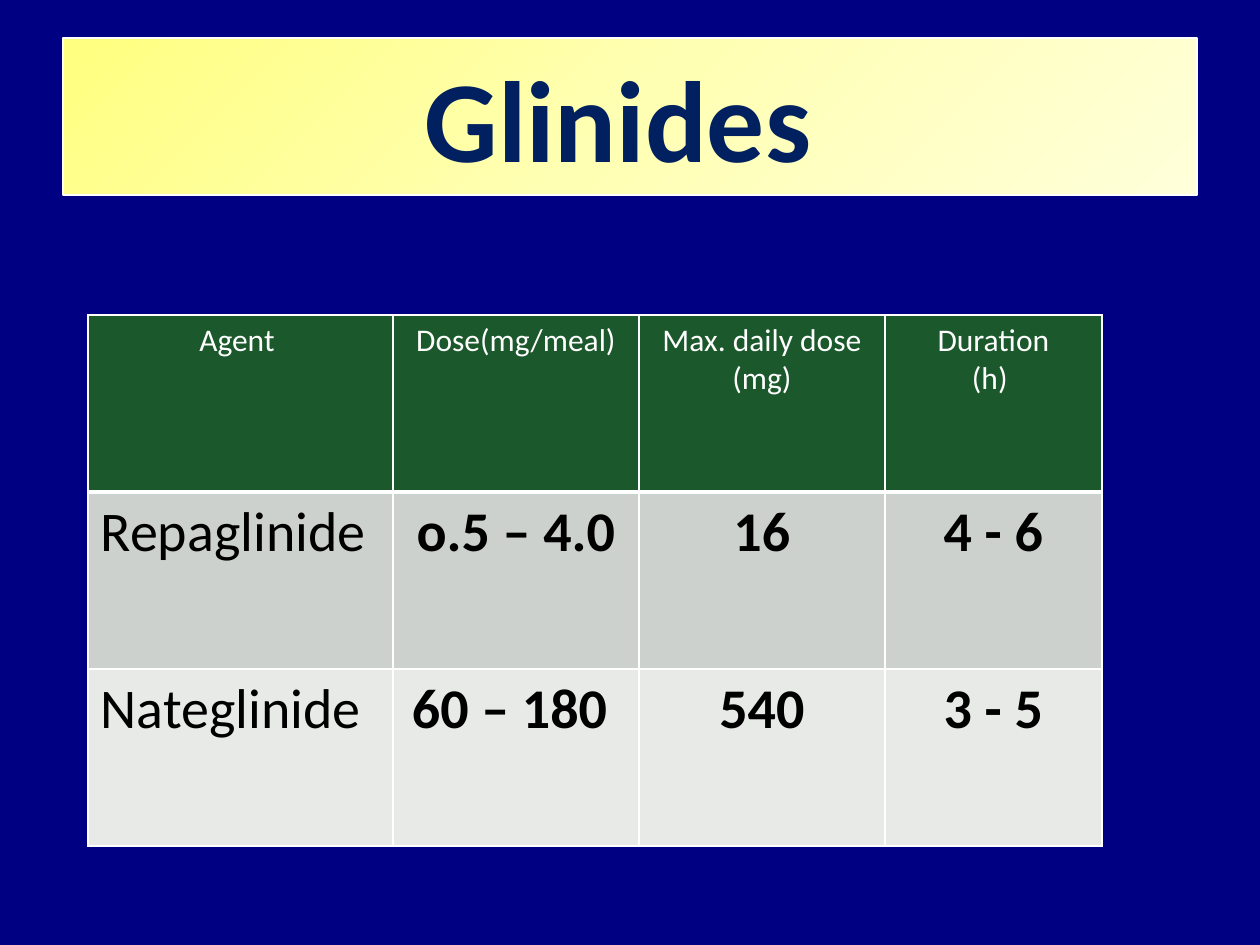
from copy import deepcopy

from lxml import etree
from pptx import Presentation
from pptx.dml.color import RGBColor
from pptx.enum.text import MSO_ANCHOR, PP_ALIGN
from pptx.oxml.ns import qn
from pptx.util import Emu, Pt

CENTER, LEFT = PP_ALIGN.CENTER, PP_ALIGN.LEFT
MIDDLE = MSO_ANCHOR.MIDDLE
SCALE = 914400 // 126
FONT = "Calibri"
COLORS = {
    "background": "000082", "white": "FFFFFF", "black": "000000",
    "title": "002060", "header": "1B582B", "band1": "CDD1CD", "band2": "E8EAE8",
}
TITLE_STOPS = [(0, "FFFF80"), (0.5, "FFFFB3"), (1, "FFFFDA")]
COLUMN_WIDTHS = [305, 246, 246, 217]
ROW_HEIGHT = 177
ROWS = [
    ["Agent ", "Dose(mg/meal)", "Max. daily dose\n(mg)", "Duration\n(h) "],
    ["Repaglinide", "o.5 – 4.0", "16", "4 - 6"],
    ["Nateglinide", "60 – 180 ", "540", "3 - 5"],
]


def px(n):
    """Turn pixels into EMU."""
    return Emu(n * SCALE)


def rgb(name):
    """Look up a named colour."""
    return RGBColor.from_string(COLORS[name])


def add_run(p, text, size, color, bold):
    """Add one formatted run to a paragraph."""
    r = p.add_run()
    r.text = text
    r.font.name = FONT
    r.font.size = Pt(size)
    r.font.bold = bold
    r.font.color.rgb = rgb(color)


def fill_gradient(sp, stops, angle):
    """Fill a shape with a linear gradient of any number of stops."""
    sp.fill.gradient()
    sp.fill.gradient_angle = angle
    gs_lst = sp.fill._fill._gradFill.find(qn("a:gsLst"))
    while len(gs_lst) < len(stops):
        gs_lst.append(deepcopy(gs_lst[0]))
    for stop, (position, color) in zip(sp.fill.gradient_stops, stops):
        stop.position = position
        stop.color.rgb = RGBColor.from_string(color)


def set_borders(cell, bottom):
    """Draw white borders round a cell, with its own bottom width."""
    tc_pr = cell._tc.get_or_add_tcPr()
    for side, width in (("L", 1), ("R", 1), ("T", 1), ("B", bottom)):
        ln = etree.SubElement(tc_pr, qn(f"a:ln{side}"), w=str(Pt(width)))
        fill = etree.SubElement(ln, qn("a:solidFill"))
        etree.SubElement(fill, qn("a:srgbClr"), val=COLORS["white"])


def fill_cell(cell, text, row, column):
    """Write and format one cell by its row and column."""
    header = row == 0
    set_borders(cell, 3 if header else 1)
    cell.fill.solid()
    cell.fill.fore_color.rgb = rgb(("header", "band1", "band2")[row])
    tf = cell.text_frame
    for i, line in enumerate(text.split("\n")):
        p = tf.add_paragraph() if i else tf.paragraphs[0]
        p.alignment = CENTER if header or column else LEFT
        add_run(p, line, 18 if header else 32,
                "white" if header else "black", not header and column > 0)


def add_title(s):
    """Format the title placeholder as a gradient banner."""
    sp = s.shapes.title
    sp.left, sp.top, sp.width, sp.height = map(px, (63, 38, 1134, 157))
    fill_gradient(sp, TITLE_STOPS, 315)
    sp.line.color.rgb = rgb("white")
    sp.line.width = Pt(0.75)
    tf = sp.text_frame
    tf.word_wrap = False
    tf.vertical_anchor = MIDDLE
    p = tf.paragraphs[0]
    p.alignment = CENTER
    add_run(p, "Glinides", 66, "title", True)
    add_run(p, " ", 60, "title", True)


def add_dose_table(s):
    """Add the table of agents and doses."""
    table = s.shapes.add_table(
        len(ROWS), len(COLUMN_WIDTHS), px(88), px(315),
        px(sum(COLUMN_WIDTHS)), px(ROW_HEIGHT * len(ROWS))).table
    for column, width in zip(table.columns, COLUMN_WIDTHS):
        column.width = px(width)
    for i, texts in enumerate(ROWS):
        table.rows[i].height = px(ROW_HEIGHT)
        for j, text in enumerate(texts):
            fill_cell(table.cell(i, j), text, i, j)


def main():
    """Build and save the slide."""
    prs = Presentation()
    prs.slide_width, prs.slide_height = px(1260), px(945)
    s = prs.slides.add_slide(prs.slide_layouts[5])
    s.background.fill.solid()
    s.background.fill.fore_color.rgb = rgb("background")
    add_title(s)
    add_dose_table(s)
    prs.save("out.pptx")


if __name__ == "__main__":
    main()
